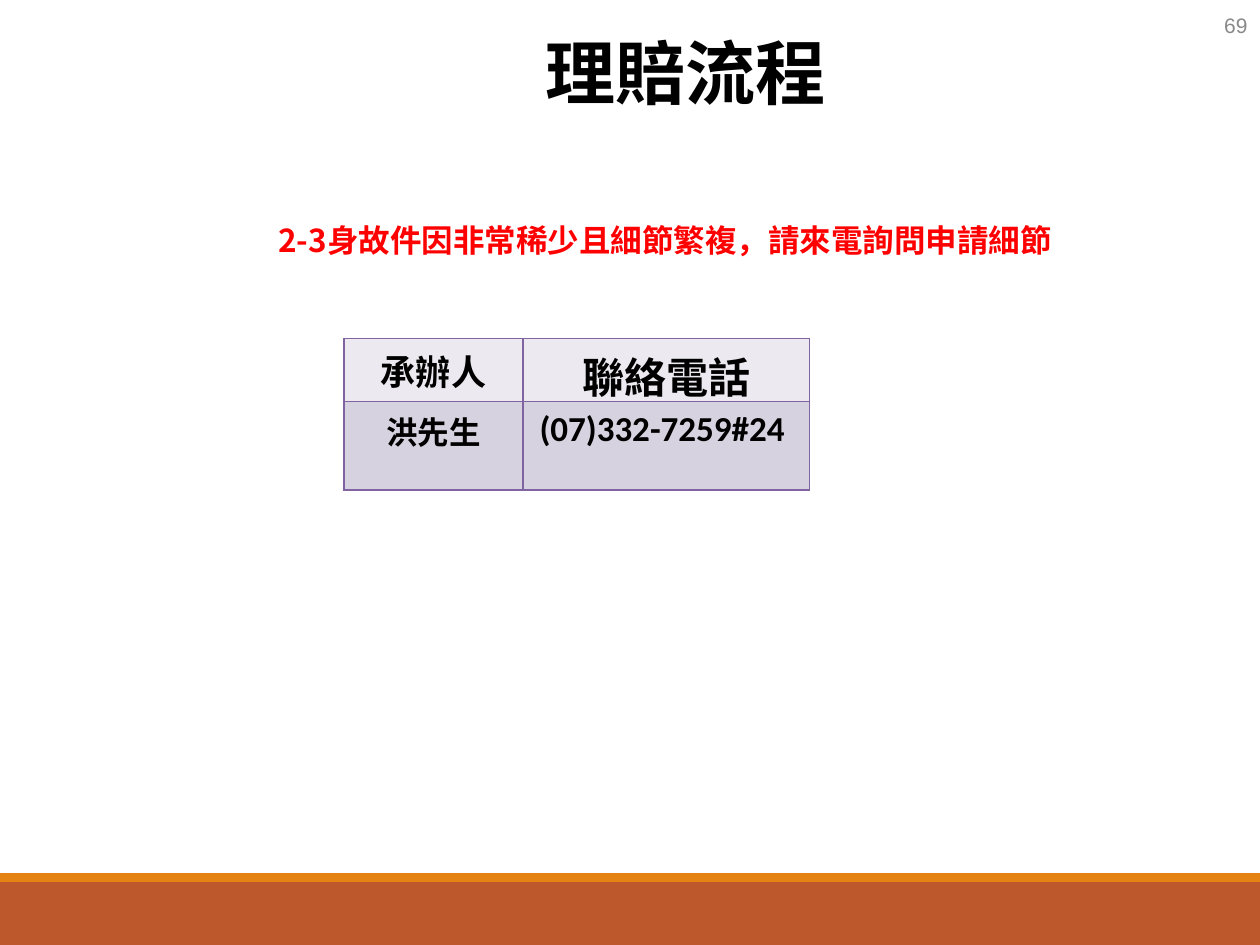
from dataclasses import dataclass

from lxml.etree import SubElement
from pptx import Presentation
from pptx.dml.color import RGBColor
from pptx.enum.shapes import MSO_SHAPE as Shape
from pptx.enum.text import MSO_ANCHOR as Anchor, PP_ALIGN as Align
from pptx.oxml.ns import qn
from pptx.slide import Slide
from pptx.table import _Cell as Cell
from pptx.text.text import TextFrame
from pptx.util import Pt


@dataclass(frozen=True)
class Theme:
    cjk: str = "Noto Sans CJK SC"
    latin: str = "Calibri"
    number_font: str = "Arial"
    black: str = "000000"
    red: str = "FF0000"
    gray: str = "898989"
    footer: str = "BD582C"
    accent: str = "E48312"
    border: str = "8064A2"
    header_fill: str = "ECEAF0"
    row_fill: str = "D7D2DF"
    title_size: float = 40
    header_size: float = 24
    cell_size: float = 20
    note_size: float = 18
    number_size: float = 12


THEME = Theme()


@dataclass(frozen=True)
class Area:
    left: float
    top: float
    width: float
    height: float

    def lengths(self) -> tuple:
        return Pt(self.left), Pt(self.top), Pt(self.width), Pt(self.height)


@dataclass(frozen=True)
class Label:
    text: str
    size: float
    font: str = THEME.cjk
    color: str = THEME.black
    bold: bool = True
    align: Align = Align.CENTER


@dataclass(frozen=True)
class Band:
    area: Area
    color: str


BANDS = (
    Band(Area(0, 504, 720, 36), THEME.footer),
    Band(Area(0, 499, 720, 5), THEME.accent),
)
TITLE = Label("理賠流程", THEME.title_size)
NOTE = Label("2-3身故件因非常稀少且細節繁複，請來電詢問申請細節",
             THEME.note_size, color=THEME.red)
NUMBER = Label("69", THEME.number_size, THEME.number_font, THEME.gray, False, Align.RIGHT)
CONTACTS = (
    (Label("承辦人", THEME.cell_size), Label("聯絡電話", THEME.header_size)),
    (Label("洪先生", THEME.note_size, THEME.latin),
     Label("(07)332-7259#24 ", THEME.cell_size, THEME.latin)),
)
COLUMN_WIDTHS = (102.5, 163.5)
ROW_HEIGHTS = (36, 50.5)
ROW_FILLS = (THEME.header_fill, THEME.row_fill)


def write(frame: TextFrame, label: Label) -> None:
    para = frame.paragraphs[0]
    para.alignment = label.align
    span = para.add_run()
    span.text = label.text
    formats = {"name": label.font, "size": Pt(label.size), "bold": label.bold}
    for name, value in formats.items():
        setattr(span.font, name, value)
    span.font.color.rgb = RGBColor.from_string(label.color)
    SubElement(span.font._element, qn("a:ea"), typeface=THEME.cjk)


def set_frame(frame: TextFrame, anchor: Anchor, wrap: bool = True) -> None:
    formats = {"word_wrap": wrap, "vertical_anchor": anchor,
               "margin_left": Pt(7.2), "margin_right": Pt(7.2),
               "margin_top": Pt(3.6), "margin_bottom": Pt(3.6)}
    for name, value in formats.items():
        setattr(frame, name, value)


def add_band(page: Slide, band: Band) -> None:
    box = page.shapes.add_shape(Shape.RECTANGLE, *band.area.lengths())
    box.shadow.inherit = False
    box.fill.solid()
    box.fill.fore_color.rgb = RGBColor.from_string(band.color)
    box.line.fill.background()


def add_title(page: Slide, area: Area, label: Label) -> None:
    title = page.shapes.title
    for name, value in zip(("left", "top", "width", "height"), area.lengths()):
        setattr(title, name, value)
    set_frame(title.text_frame, Anchor.TOP, wrap=False)
    write(title.text_frame, label)


def add_text(page: Slide, area: Area, label: Label, anchor: Anchor = Anchor.TOP) -> None:
    box = page.shapes.add_textbox(*area.lengths())
    set_frame(box.text_frame, anchor)
    write(box.text_frame, label)


def add_borders(cell: Cell) -> None:
    """Outline all four sides; the lines must precede the fill in the XML."""
    properties = cell._tc.get_or_add_tcPr()
    for index, side in enumerate(("lnL", "lnR", "lnT", "lnB")):
        line = SubElement(properties, qn(f"a:{side}"), w=str(Pt(0.96)))
        fill = SubElement(line, qn("a:solidFill"))
        SubElement(fill, qn("a:srgbClr"), val=THEME.border)
        properties.insert(index, line)


def add_contacts(page: Slide, left: float, top: float) -> None:
    area = Area(left, top, sum(COLUMN_WIDTHS), sum(ROW_HEIGHTS))
    table = page.shapes.add_table(len(ROW_HEIGHTS), len(COLUMN_WIDTHS), *area.lengths()).table
    table.first_row = table.horz_banding = False
    for column, width in zip(table.columns, COLUMN_WIDTHS):
        column.width = Pt(width)
    for row, height, fill, labels in zip(table.rows, ROW_HEIGHTS, ROW_FILLS, CONTACTS):
        row.height = Pt(height)
        for cell, label in zip(row.cells, labels):
            cell.margin_top, cell.margin_bottom = Pt(3.6), Pt(0)
            cell.fill.solid()
            cell.fill.fore_color.rgb = RGBColor.from_string(fill)
            add_borders(cell)
            write(cell.text_frame, label)


def main() -> None:
    deck = Presentation()
    deck.slide_width, deck.slide_height = Pt(720), Pt(540)
    page = deck.slides.add_slide(deck.slide_layouts.get_by_name("Title Only"))
    for band in BANDS:
        add_band(page, band)
    add_title(page, Area(304.5, 13.5, 174.5, 55.5), TITLE)
    add_text(page, Area(144.5, 122.5, 471, 29), NOTE)
    add_contacts(page, 196.5, 193.5)
    add_text(page, Area(642, 0, 78, 29), NUMBER, Anchor.MIDDLE)
    deck.save("out.pptx")


if __name__ == "__main__":
    main()
